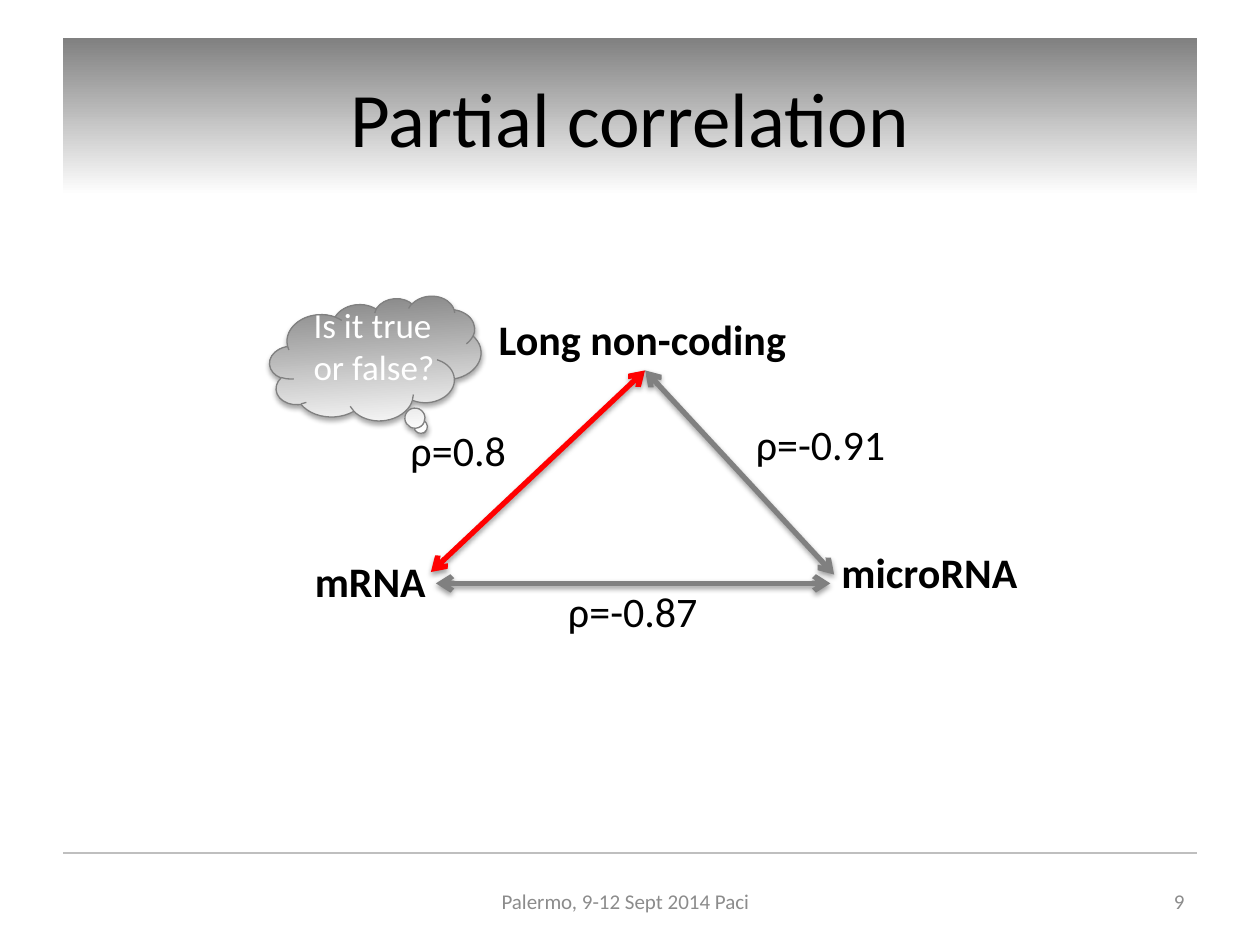
"""Build the partial correlation slide with its triangle of RNA types."""
from dataclasses import dataclass
from typing import Any

from lxml.etree import SubElement
from pptx import Presentation
from pptx.dml.color import RGBColor
from pptx.enum.shapes import MSO_CONNECTOR, MSO_SHAPE
from pptx.enum.text import MSO_ANCHOR, PP_ALIGN
from pptx.oxml.ns import qn
from pptx.util import Pt

EMU_PER_PX = 9144
COLORS = {
    "black": "000000",
    "white": "FFFFFF",
    "gray": "808080",
    "footer": "8C8C8C",
    "rule": "BFBFBF",
    "red": "FF0000",
}


@dataclass(frozen=True)
class Box:
    left: int
    top: int
    width: int
    height: int


@dataclass(frozen=True)
class Label:
    box: Box
    text: str
    size: int = 24
    color: str = "black"
    bold: bool = False
    align: PP_ALIGN = PP_ALIGN.LEFT
    anchor: MSO_ANCHOR = MSO_ANCHOR.TOP
    wrap: bool = False


@dataclass(frozen=True)
class Edge:
    start: tuple[int, int]
    end: tuple[int, int]
    color: str
    width: float = 3
    arrows: bool = True


RULE = Edge((50, 677), (950, 677), "rule", 1, False)
EDGES = [
    Edge((342, 454), (512, 294), "red"),
    Edge((346, 463), (659, 463), "gray"),
    Edge((512, 294), (662, 456), "gray"),
]
TITLE = Label(Box(50, 30, 900, 125), "Partial correlation", 44,
              align=PP_ALIGN.CENTER, anchor=MSO_ANCHOR.MIDDLE, wrap=True)
CLOUD = Box(214, 238, 168, 96)
LABELS = [
    Label(Box(386, 244, 251, 50), "Long non-coding", bold=True),
    Label(Box(240, 436, 110, 51), "mRNA", bold=True),
    Label(Box(658, 429, 162, 50), "microRNA", bold=True),
    Label(Box(590, 327, 124, 51), "ρ=-0.91"),
    Label(Box(441, 460, 124, 51), "ρ=-0.87"),
    Label(Box(316, 332, 97, 50), "ρ=0.8"),
    Label(Box(239, 236, 117, 77), "Is it true\nor false?", 20, "white"),
    Label(Box(338, 695, 317, 40), "Palermo, 9-12 Sept 2014 Paci", 12, "footer",
          align=PP_ALIGN.CENTER, anchor=MSO_ANCHOR.MIDDLE, wrap=True),
    Label(Box(717, 695, 233, 40), "9", 12, "footer",
          align=PP_ALIGN.RIGHT, anchor=MSO_ANCHOR.MIDDLE, wrap=True),
]


def px(*lengths: int) -> list[int]:
    """Turn pixel lengths into EMU."""
    return [length * EMU_PER_PX for length in lengths]


def place(box: Box) -> list[int]:
    """Return the EMU position and size of a box."""
    return px(box.left, box.top, box.width, box.height)


def rgb(name: str) -> RGBColor:
    """Look up a named color."""
    return RGBColor.from_string(COLORS[name])


def apply_format(target: Any, values: dict[str, Any]) -> None:
    """Set each attribute given in a dict of format values."""
    for name, value in values.items():
        setattr(target, name, value)


def add_shadow(shape: Any, opacity: int, distance: float) -> None:
    """Give a shape or connector a soft black shadow below it."""
    effects = SubElement(shape.element.spPr, qn("a:effectLst"))
    shadow = SubElement(effects, qn("a:outerShdw"), {
        "blurRad": str(Pt(3.1)), "dist": str(Pt(distance)),
        "dir": "5400000", "rotWithShape": "0"})
    color = SubElement(shadow, qn("a:srgbClr"), val=COLORS["black"])
    SubElement(color, qn("a:alpha"), val=str(opacity * 1000))


def write_text(shape: Any, label: Label) -> None:
    """Write and format the text of a label in a shape."""
    frame = shape.text_frame
    frame.text = label.text
    apply_format(frame, {"word_wrap": label.wrap, "vertical_anchor": label.anchor})
    for paragraph in frame.paragraphs:
        paragraph.alignment = label.align
        for run in paragraph.runs:
            apply_format(run.font, {
                "name": "Calibri", "size": Pt(label.size), "bold": label.bold})
            run.font.color.rgb = rgb(label.color)


def add_label(slide: Any, label: Label) -> None:
    """Add a label as a text box."""
    write_text(slide.shapes.add_textbox(*place(label.box)), label)


def add_gradient_shape(slide: Any, kind: MSO_SHAPE, box: Box) -> Any:
    """Add a shape that fades from gray at the top to white."""
    shape = slide.shapes.add_shape(kind, *place(box))
    shape.fill.gradient()
    shape.fill.gradient_angle = 270
    for stop, position, color in zip(shape.fill.gradient_stops, (0, 1), ("gray", "white")):
        stop.position = position
        stop.color.rgb = rgb(color)
    return shape


def add_title(slide: Any) -> None:
    """Add the title band."""
    band = add_gradient_shape(slide, MSO_SHAPE.RECTANGLE, TITLE.box)
    band.line.fill.background()
    band.shadow.inherit = False
    write_text(band, TITLE)


def add_cloud(slide: Any) -> None:
    """Add the tilted thought cloud."""
    cloud = add_gradient_shape(slide, MSO_SHAPE.CLOUD_CALLOUT, CLOUD)
    cloud.rotation = 356
    cloud.adjustments[0] = 0.2
    cloud.adjustments[1] = 0.6
    cloud.line.color.rgb = rgb("gray")
    cloud.line.width = Pt(0.75)
    add_shadow(cloud, 35, 1.8)


def add_edge(slide: Any, edge: Edge) -> None:
    """Add a plain rule or a shadowed double arrow."""
    connector = slide.shapes.add_connector(
        MSO_CONNECTOR.STRAIGHT, *px(*edge.start, *edge.end))
    connector.line.color.rgb = rgb(edge.color)
    connector.line.width = Pt(edge.width)
    if edge.arrows:
        outline = connector.element.spPr.find(qn("a:ln"))
        for end in ("a:headEnd", "a:tailEnd"):
            SubElement(outline, qn(end), type="arrow")
        add_shadow(connector, 38, 1.6)
    else:
        SubElement(connector.element.spPr, qn("a:effectLst"))


def main() -> None:
    """Build and save the presentation."""
    presentation = Presentation()
    width, height = px(1000, 750)
    apply_format(presentation, {"slide_width": width, "slide_height": height})
    slide = presentation.slides.add_slide(presentation.slide_layouts[6])
    add_edge(slide, RULE)
    add_title(slide)
    for edge in EDGES:
        add_edge(slide, edge)
    add_cloud(slide)
    for label in LABELS:
        add_label(slide, label)
    presentation.save("out.pptx")


if __name__ == "__main__":
    main()
